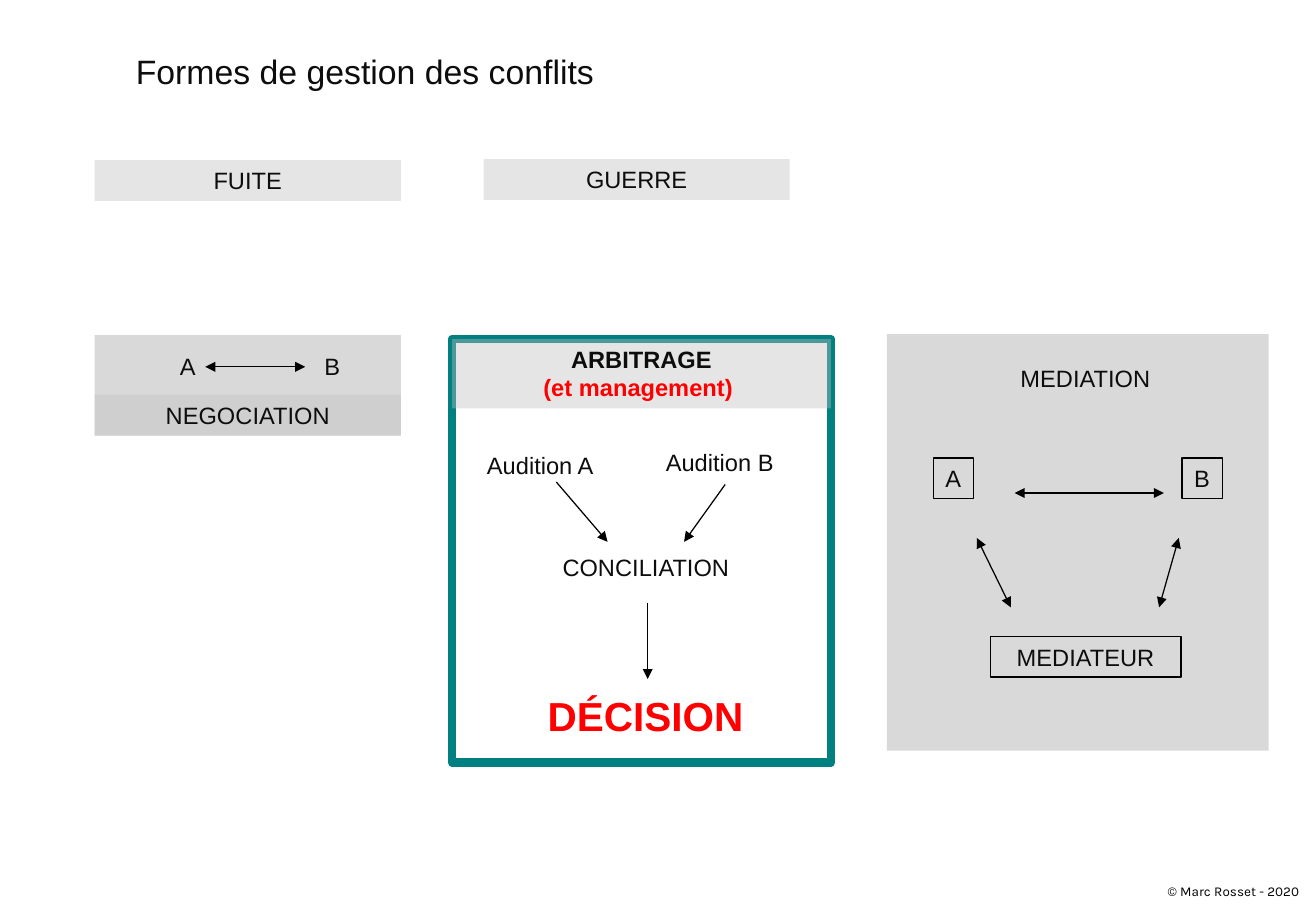
from lxml import etree
from pptx import Presentation
from pptx.dml.color import RGBColor
from pptx.enum.shapes import MSO_CONNECTOR, MSO_SHAPE
from pptx.enum.text import MSO_ANCHOR, PP_ALIGN
from pptx.oxml.ns import qn
from pptx.util import Cm, Pt

RECT, STRAIGHT = MSO_SHAPE.RECTANGLE, MSO_CONNECTOR.STRAIGHT
LEFT, CENTER = PP_ALIGN.LEFT, PP_ALIGN.CENTER
TOP, MIDDLE = MSO_ANCHOR.TOP, MSO_ANCHOR.MIDDLE

INK, BLACK, RED, TEAL = "0D0D0D", "000000", "FF0000", "008080"
PANEL, BAND = "D9D9D9", "C0C0C0"
BAND_OPACITY = 40
ROW = 0.85  # height of a one-line label
BAND_WIDTH = 6.4

# Content, in cm: (left, top, width, height)
TITLE = ("Formes de gestion des conflits", (2.59, 0.76, 15.7, 1.45))
CREDIT = ("© Marc Rosset - 2020", (24.16, 18.34, 3.28, 0.61))

NEGOTIATION_PANEL = (1.98, 7.01, BAND_WIDTH, 2.1)
ARBITRATION_FRAME = (9.45, 7.09, 7.92, 8.86)
MEDIATION_PANEL = (18.54, 6.99, 7.98, 8.71)

BANDS = [
    ("FUITE", 1.98, 3.35),
    ("GUERRE", 10.11, 3.33),
    ("NEGOCIATION", 1.98, 8.26),
]
PLAIN_LABELS = [
    ("A", 3.51, 7.24, 0.84),
    ("B", 6.53, 7.24, 0.84),
    ("Audition A", 9.93, 9.3, 2.84),
    ("Audition B", 13.67, 9.25, 2.87),
    ("CONCILIATION", 11.51, 11.43, 4.01),
]
ARBITRATION = [("ARBITRAGE", INK), ("(et management) ", RED)]
DECISION = ("DÉCISION", (11.2, 14.33, 4.65, 1.3))
MEDIATION = ("MEDIATION", (18.97, 7.49, 7.44, 1.45))
MEDIATION_ROLES = [
    ("A", 19.51, 9.58, 0.84),
    ("B", 24.71, 9.58, 0.84),
    ("MEDIATEUR", 20.7, 13.31, 3.99),
]

# Arrows: (x1, y1, x2, y2)
TWO_WAY = [
    (4.29, 7.67, 6.38, 7.67),
    (21.21, 10.31, 24.33, 10.31),
    (20.42, 11.25, 21.13, 12.7),
    (24.64, 11.25, 24.23, 12.7),
]
ONE_WAY = [
    (13.54, 12.6, 13.54, 14.2),
    (15.16, 10.13, 14.3, 11.33),
    (11.63, 10.08, 12.7, 11.33),
]

prs = Presentation()
prs.slide_width, prs.slide_height = Cm(27.51), Cm(19.05)
slide = prs.slides.add_slide(prs.slide_layouts[6])
shapes = slide.shapes


def rgb(code):
    return RGBColor.from_string(code)


def write(shape, lines, align=LEFT, anchor=TOP, wrap=True, **font):
    """Put (text, colour) lines into a shape, one paragraph each."""
    frame = shape.text_frame
    frame.word_wrap = wrap
    frame.vertical_anchor = anchor
    style = {"name": "Arial", "size": Pt(14), **font}
    for i, (text, color) in enumerate(lines):
        paragraph = frame.add_paragraph() if i else frame.paragraphs[0]
        paragraph.alignment = align
        run = paragraph.add_run()
        run.text = text
        run.font.color.rgb = rgb(color)
        for key, value in style.items():
            setattr(run.font, key, value)


def text(box, content, color=INK, **options):
    write(shapes.add_textbox(*map(Cm, box)), [(content, color)], **options)


def rect(box, fill=None, opacity=None, line=None, weight=0.75):
    shape = shapes.add_shape(RECT, *map(Cm, box))
    shape.shadow.inherit = False
    if fill:
        shape.fill.solid()
        shape.fill.fore_color.rgb = rgb(fill)
    else:
        shape.fill.background()
    if opacity:
        color = shape.fill._xPr.find(qn("a:solidFill"))[0]
        etree.SubElement(color, qn("a:alpha")).set("val", str(opacity * 1000))
    if line:
        shape.line.color.rgb = rgb(line)
        shape.line.width = Pt(weight)
    else:
        shape.line.fill.background()
    return shape


def arrow(ends, heads):
    link = shapes.add_connector(STRAIGHT, *map(Cm, ends))
    link.line.color.rgb = rgb(BLACK)
    link.line.width = Pt(0.75)
    for head in heads:
        etree.SubElement(link.line._get_or_add_ln(), qn(head)).set("type", "triangle")
    etree.SubElement(link._element.spPr, qn("a:effectLst"))


# Title and credit
text(TITLE[1], TITLE[0], anchor=MIDDLE, size=Pt(20))
text(CREDIT[1], CREDIT[0], BLACK, wrap=False, name="Karla", size=Pt(8))

# Panels
rect(NEGOTIATION_PANEL, PANEL)
rect(ARBITRATION_FRAME, line=TEAL, weight=5)
rect(MEDIATION_PANEL, PANEL)

# Headings
for name, left, top in BANDS:
    band = rect((left, top, BAND_WIDTH, ROW), BAND, BAND_OPACITY)
    write(band, [(name, INK)], CENTER)
arbitration_band = rect((*ARBITRATION_FRAME[:3], 1.45), BAND, BAND_OPACITY)
write(arbitration_band, ARBITRATION, CENTER, bold=True)
write(rect(MEDIATION[1], PANEL), [(MEDIATION[0], INK)], CENTER)

# Parties and steps
for name, left, top, width in PLAIN_LABELS:
    text((left, top, width, ROW), name, wrap=False)
text(DECISION[1], DECISION[0], RED, wrap=False, size=Pt(24), bold=True)
for name, left, top, width in MEDIATION_ROLES:
    role = rect((left, top, width, ROW), PANEL, line=BLACK)
    write(role, [(name, INK)], CENTER, wrap=False)

# Arrows
for ends in TWO_WAY:
    arrow(ends, ["a:headEnd", "a:tailEnd"])
for ends in ONE_WAY:
    arrow(ends, ["a:tailEnd"])

prs.save("out.pptx")
